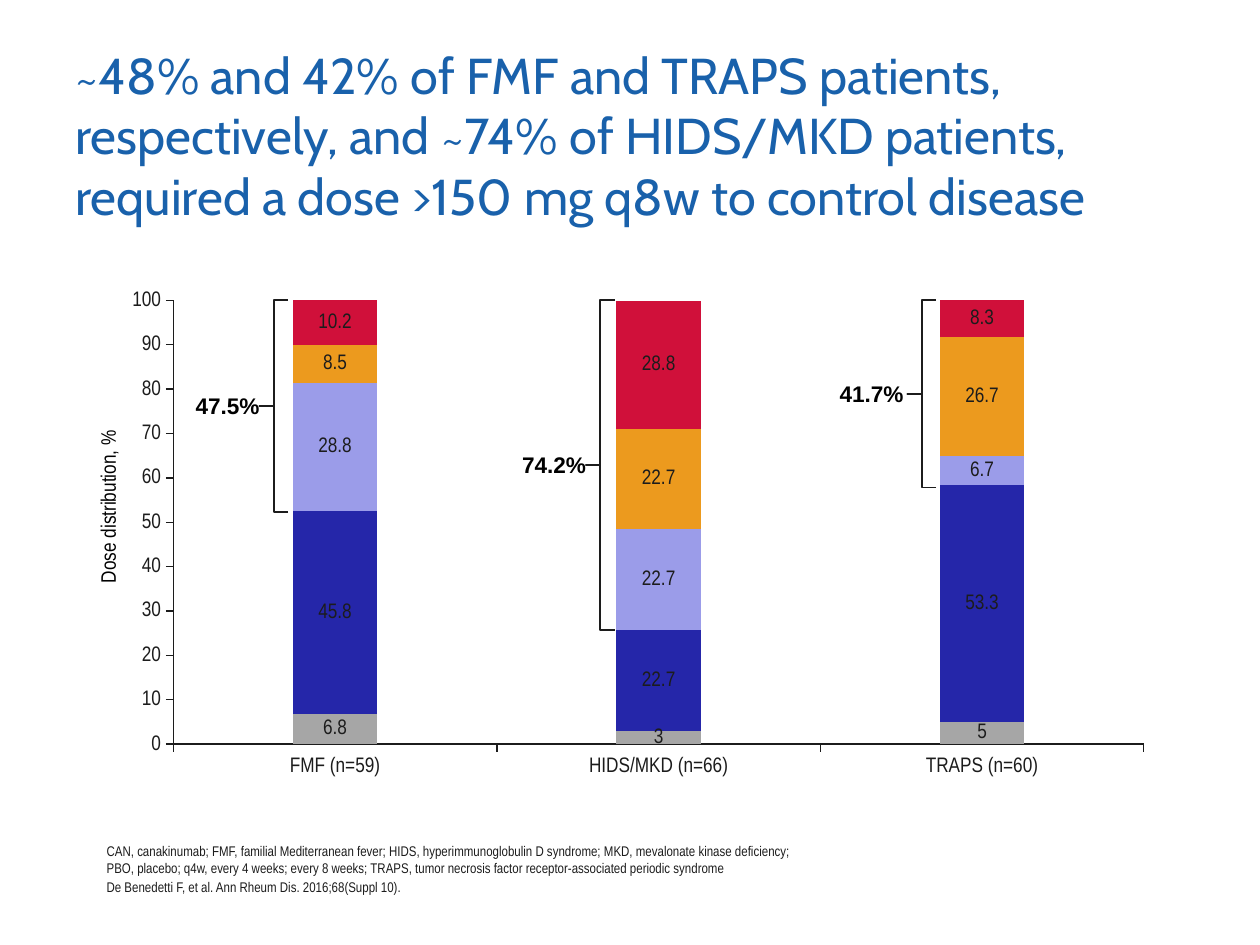
from typing import NamedTuple

from lxml.etree import SubElement
from pptx import Presentation
from pptx.chart.data import CategoryChartData
from pptx.dml.color import RGBColor
from pptx.enum.chart import XL_CHART_TYPE, XL_LABEL_POSITION, XL_TICK_MARK
from pptx.enum.shapes import MSO_SHAPE
from pptx.enum.text import MSO_ANCHOR, PP_ALIGN
from pptx.oxml.ns import qn
from pptx.util import Cm, Pt

INK = "1C1C1C"
BLACK = "000000"
NARROW = "Arial Narrow"


class Dose(NamedTuple):
    values: tuple[float, ...]
    fill: str
    digits: str = "General"


class Brace(NamedTuple):
    label: str
    left: float
    height: float
    gap: float = 0


class Face(NamedTuple):
    name: str
    size: float
    hue: str
    bold: bool = False


GROUPS = ("FMF (n=59)", "HIDS/MKD (n=66)", "TRAPS (n=60)")
DOSES = (
    Dose((6.8, 3, 5), "A6A6A6"),
    Dose((45.8, 22.7, 53.3), "2526A9"),
    Dose((28.8, 22.7, 6.7), "9B9CE9", "0.0"),
    Dose((8.5, 22.7, 26.7), "EC9A1E"),
    Dose((10.2, 28.8, 8.3), "D0103A"),
)
BRACES = (
    Brace("47.5%", 5.23, 4.27),
    Brace("74.2%", 11.81, 6.65),
    Brace("41.7%", 18.29, 3.78, 0.08),
)
TOP = 6.05
TITLE = (
    "~48% and 42% of FMF and TRAPS patients, respectively, and ~74% of "
    "HIDS/MKD patients, required a dose >150 mg q8w to control disease"
)
NOTES = (
    "CAN, canakinumab; FMF, familial Mediterranean fever; HIDS, "
    "hyperimmunoglobulin D syndrome; MKD, mevalonate kinase deficiency; \v"
    "PBO, placebo; q4w, every 4 weeks; every 8 weeks; TRAPS, tumor necrosis "
    "factor receptor-associated periodic syndrome\n"
    "De Benedetti F, et al. Ann Rheum Dis. 2016;68(Suppl 10)."
)


def color(code: str) -> RGBColor:
    return RGBColor.from_string(code)


def style(font, face: Face) -> None:
    font.name = face.name
    font.size = Pt(face.size)
    font.bold = face.bold
    font.color.rgb = color(face.hue)


def add_text(slide, box: tuple, text: str, face: Face, align=PP_ALIGN.LEFT,
             anchor=MSO_ANCHOR.TOP, inset: bool = False):
    shape = slide.shapes.add_textbox(*map(Cm, box))
    frame = shape.text_frame
    frame.word_wrap = True
    frame.vertical_anchor = anchor
    if not inset:
        frame.margin_left = frame.margin_right = 0
        frame.margin_top = frame.margin_bottom = 0
    frame.text = text
    for index, para in enumerate(frame.paragraphs):
        para.alignment = align
        if index:
            para.space_before = Pt(1.6)
        for run in para.runs:
            style(run.font, face)
    return shape


def place_plot(chart, left: float, top: float, width: float, height: float) -> None:
    area = chart.element.find(".//" + qn("c:plotArea"))
    for old in area.findall(qn("c:layout")):
        area.remove(old)
    layout = SubElement(area, qn("c:layout"))
    area.insert(0, layout)
    manual = SubElement(layout, qn("c:manualLayout"))
    parts = {"layoutTarget": "inner", "xMode": "edge", "yMode": "edge",
             "x": left, "y": top, "w": width, "h": height}
    for tag, value in parts.items():
        SubElement(manual, qn("c:" + tag)).set("val", str(value))


def add_bars(slide) -> None:
    data = CategoryChartData()
    data.categories = GROUPS
    for dose in DOSES:
        data.add_series("", dose.values)
    box = map(Cm, (1.99, 4.68, 21.5, 11.47))
    chart = slide.shapes.add_chart(XL_CHART_TYPE.COLUMN_STACKED, *box, data).chart
    face = Face(NARROW, 12, INK)
    style(chart.font, face)
    chart.has_legend = False
    chart.has_title = False
    place_plot(chart, 0.07, 0.12, 0.91, 0.78)

    plot = chart.plots[0]
    plot.gap_width = 284
    plot.overlap = 100
    plot.vary_by_categories = False
    for series, dose in zip(plot.series, DOSES):
        series.format.fill.solid()
        series.format.fill.fore_color.rgb = color(dose.fill)
        labels = series.data_labels
        labels.show_value = True
        labels.position = XL_LABEL_POSITION.CENTER
        labels.number_format = dose.digits
        labels.number_format_is_linked = False
        style(labels.font, face)

    for axis in (chart.category_axis, chart.value_axis):
        axis.major_tick_mark = XL_TICK_MARK.OUTSIDE
        axis.minor_tick_mark = XL_TICK_MARK.NONE
        axis.has_major_gridlines = False
        axis.format.line.color.rgb = color(INK)
        axis.format.line.width = Pt(0.75)
        style(axis.tick_labels.font, face)
    scale = chart.value_axis
    scale.minimum_scale = 0
    scale.maximum_scale = 100
    scale.major_unit = 10


def add_brace(slide, brace: Brace) -> None:
    box = map(Cm, (brace.left, TOP, 0.58, brace.height))
    shape = slide.shapes.add_shape(MSO_SHAPE.LEFT_BRACE, *box)
    shape.shadow.inherit = False
    shape.adjustments[0] = 0
    shape.fill.background()
    shape.line.color.rgb = color(INK)
    shape.line.width = Pt(1)
    wide, high = 1.7, 0.56
    place = (brace.left - brace.gap - wide, TOP + (brace.height - high) / 2, wide, high)
    add_text(slide, place, brace.label, Face("Arial", 12.9, BLACK, True), PP_ALIGN.RIGHT)


def main() -> None:
    deck = Presentation()
    deck.slide_width = Cm(25.4)
    deck.slide_height = Cm(19.05)
    slide = deck.slides.add_slide(deck.slide_layouts[6])
    add_text(slide, (1.27, 0.76, 22.86, 3.18), TITLE,
             Face("Cabin", 28.8, "1961AB"), inset=True)
    add_text(slide, (1.9, 16.76, 16.71, 1.42), NOTES, Face(NARROW, 8, INK),
             anchor=MSO_ANCHOR.BOTTOM, inset=True)
    add_bars(slide)
    axis = add_text(slide, (-1.22, 9.96, 6.78, 0.51), "Dose distribution, %",
                    Face(NARROW, 12, BLACK), PP_ALIGN.CENTER)
    axis.rotation = 270
    for brace in BRACES:
        add_brace(slide, brace)
    deck.save("out.pptx")


if __name__ == "__main__":
    main()
